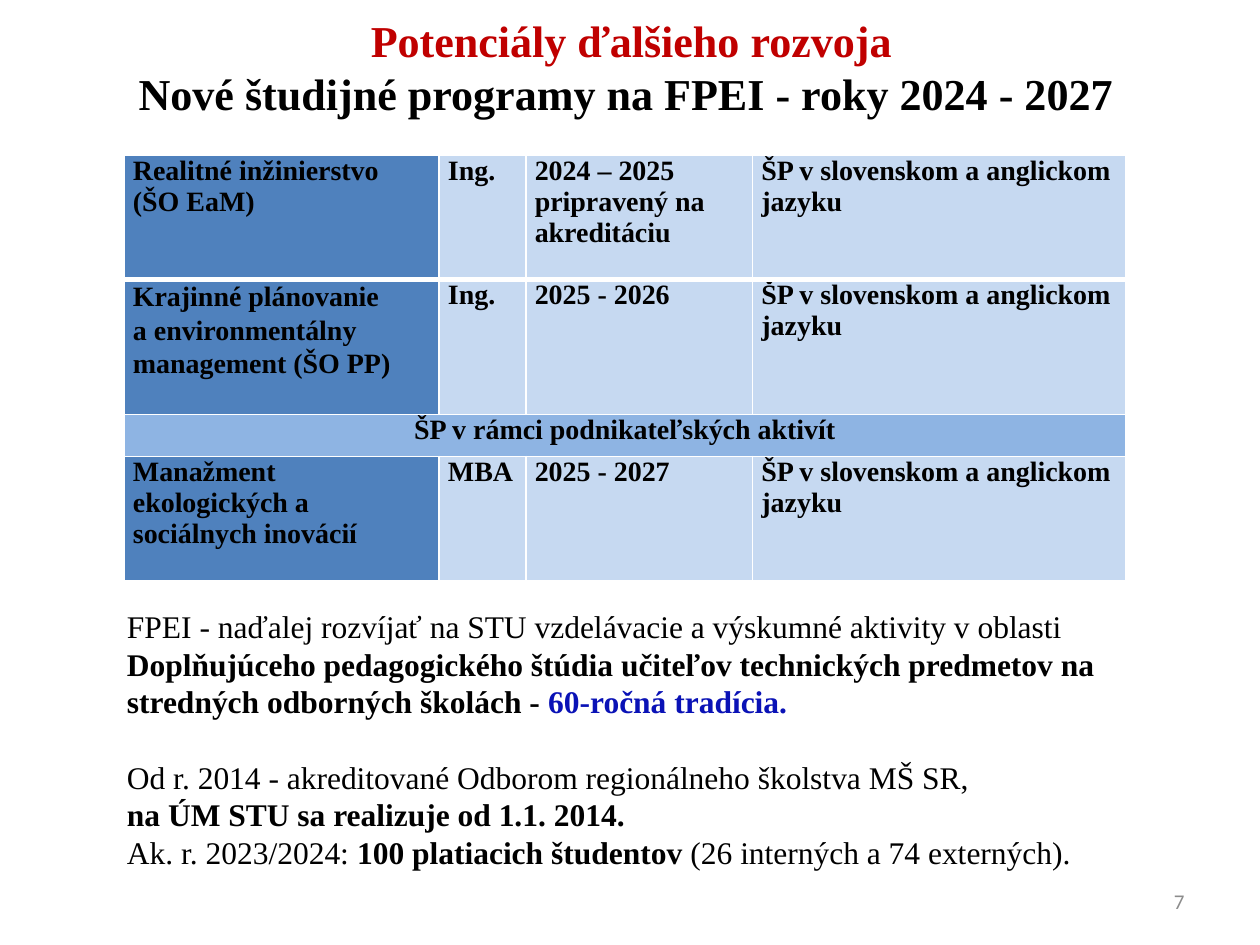
import pptx
import pptx.dml.color
import pptx.enum.text
import pptx.oxml
import pptx.oxml.ns
import pptx.util

Cm = pptx.util.Cm
Pt = pptx.util.Pt
ALIGN = pptx.enum.text.PP_ALIGN
ANCHOR = pptx.enum.text.MSO_ANCHOR

COLORS = {
    "red": "C00000", "black": "000000", "blue": "0A12B6", "grey": "8C8C8C",
    "name": "4F81BD", "detail": "C6D9F1", "band": "8EB4E3", "border": "FFFFFF",
}
SERIF = "Times New Roman"
LANGUAGES = "ŠP v slovenskom a anglickom jazyku"
COLUMN_WIDTHS = [6.35, 1.75, 4.57, 7.52]
ROW_HEIGHTS = [2.51, 2.72, 0.84, 2.51]
BAND_ROW = 2
PROGRAMMES = [
    (["Realitné inžinierstvo", "(ŠO EaM)"], ["Ing."],
     ["2024 – 2025", "pripravený na akreditáciu"], [LANGUAGES]),
    (["Krajinné plánovanie \na environmentálny management (ŠO PP)"], ["Ing."],
     ["2025 - 2026"], [LANGUAGES]),
    (["ŠP v rámci podnikateľských aktivít"],),
    (["Manažment ekologických a sociálnych inovácií"], ["MBA"],
     ["2025 - 2027"], [LANGUAGES]),
]


def rgb(name):
    return pptx.dml.color.RGBColor.from_string(COLORS[name])


def add_span(para, text, size=18, font=SERIF, color="black", bold=False):
    """Add formatted text to a paragraph; a newline becomes a line break."""
    for index, line in enumerate(text.split("\n")):
        if index:
            para.add_line_break()
        span = para.add_run()
        span.text = line
        span.font.size = Pt(size)
        span.font.name = font
        span.font.bold = bold
        span.font.color.rgb = rgb(color)


def write_text(frame, paragraphs, align=ALIGN.LEFT, spacing=None, **style):
    """Fill a text frame; each paragraph is a list of (text, format) spans."""
    frame.word_wrap = True
    for index, spans in enumerate(paragraphs):
        para = frame.add_paragraph() if index else frame.paragraphs[0]
        para.alignment = align
        if spacing:
            para.line_spacing = spacing
        for text, extra in spans:
            add_span(para, text, **{**style, **extra})


def place(shape, left, top, width, height):
    shape.left, shape.top = Cm(left), Cm(top)
    shape.width, shape.height = Cm(width), Cm(height)


def add_title(page):
    title = page.shapes.title
    place(title, 1.3, 0.33, 22.86, 2)
    frame = title.text_frame
    frame.auto_size = pptx.enum.text.MSO_AUTO_SIZE.NONE
    frame.vertical_anchor = ANCHOR.MIDDLE
    write_text(frame, [[
        ("Potenciály ďalšieho rozvoja\n", {"color": "red"}),
        ("Nové študijné programy na FPEI - roky 2024 - 2027 ", {}),
    ]], align=ALIGN.CENTER, spacing=Pt(30.3), size=25.2, bold=True)


def set_borders(cell, bottom=1):
    properties = cell._tc.get_or_add_tcPr()
    for index, side in enumerate("LRTB"):
        width = Pt(bottom if side == "B" else 1)
        properties.insert(index, pptx.oxml.parse_xml(
            f'<a:ln{side} {pptx.oxml.ns.nsdecls("a")} w="{width}"><a:solidFill>'
            f'<a:srgbClr val="{COLORS["border"]}"/></a:solidFill></a:ln{side}>'))


def format_cell(cell, fill, bottom):
    cell.fill.solid()
    cell.fill.fore_color.rgb = rgb(fill)
    cell.margin_left = cell.margin_right = Cm(0.18)
    cell.margin_top = cell.margin_bottom = 0
    set_borders(cell, bottom)


def add_programme_table(page):
    frame = page.shapes.add_table(
        len(ROW_HEIGHTS), len(COLUMN_WIDTHS), Cm(2.5), Cm(3.13),
        Cm(sum(COLUMN_WIDTHS)), Cm(sum(ROW_HEIGHTS)))
    table = frame.table
    for column, width in zip(table.columns, COLUMN_WIDTHS):
        column.width = Cm(width)
    for row, height in zip(table.rows, ROW_HEIGHTS):
        row.height = Cm(height)
    table.cell(BAND_ROW, 0).merge(table.cell(BAND_ROW, len(COLUMN_WIDTHS) - 1))

    for r, programme in enumerate(PROGRAMMES):
        band = r == BAND_ROW
        for c in range(len(COLUMN_WIDTHS)):
            fill = "band" if band else "detail" if c else "name"
            format_cell(table.cell(r, c), fill, bottom=1 if r else 3)
        for c, lines in enumerate(programme):
            write_text(table.cell(r, c).text_frame, [[(line, {})] for line in lines],
                       align=ALIGN.CENTER if band else ALIGN.LEFT,
                       spacing=1.07 if (r, c) == (1, 0) else None,
                       size=16, bold=True)


def add_text_box(page, bounds, paragraphs, anchor=ANCHOR.TOP, **style):
    box = page.shapes.add_textbox(*(Cm(value) for value in bounds))
    box.text_frame.vertical_anchor = anchor
    write_text(box.text_frame, paragraphs, **style)
    return box


def main():
    deck = pptx.Presentation()
    deck.slide_width, deck.slide_height = Cm(25.4), Cm(19.05)
    page = deck.slides.add_slide(deck.slide_layouts[5])
    strong = {"bold": True}

    add_title(page)
    add_programme_table(page)

    # Teacher training
    training = add_text_box(page, (2.31, 12.12, 20.6, 5.64), [
        [("FPEI - naďalej rozvíjať na STU vzdelávacie a výskumné aktivity v oblasti ", {}),
         ("Doplňujúceho pedagogického štúdia učiteľov technických predmetov "
          "na stredných odborných školách - ", strong),
         ("60-ročná tradícia.", {"bold": True, "color": "blue"})],
        [("Od r. 2014 - akreditované Odborom regionálneho školstva MŠ SR,", {})],
        [("na ÚM STU sa realizuje od 1.1. 2014.", strong)],
        [("Ak. r. 2023/2024: ", {}),
         ("100 platiacich študentov ", strong),
         ("(26 interných a 74 externých).", {})],
    ], spacing=Pt(21.5))
    training.text_frame.paragraphs[1].space_before = Pt(21.5)

    # Page number
    add_text_box(page, (18.2, 17.66, 5.93, 1.01), [[("7", {})]], anchor=ANCHOR.MIDDLE,
                 align=ALIGN.RIGHT, size=12, font="Calibri", color="grey")

    deck.save("out.pptx")


if __name__ == "__main__":
    main()
